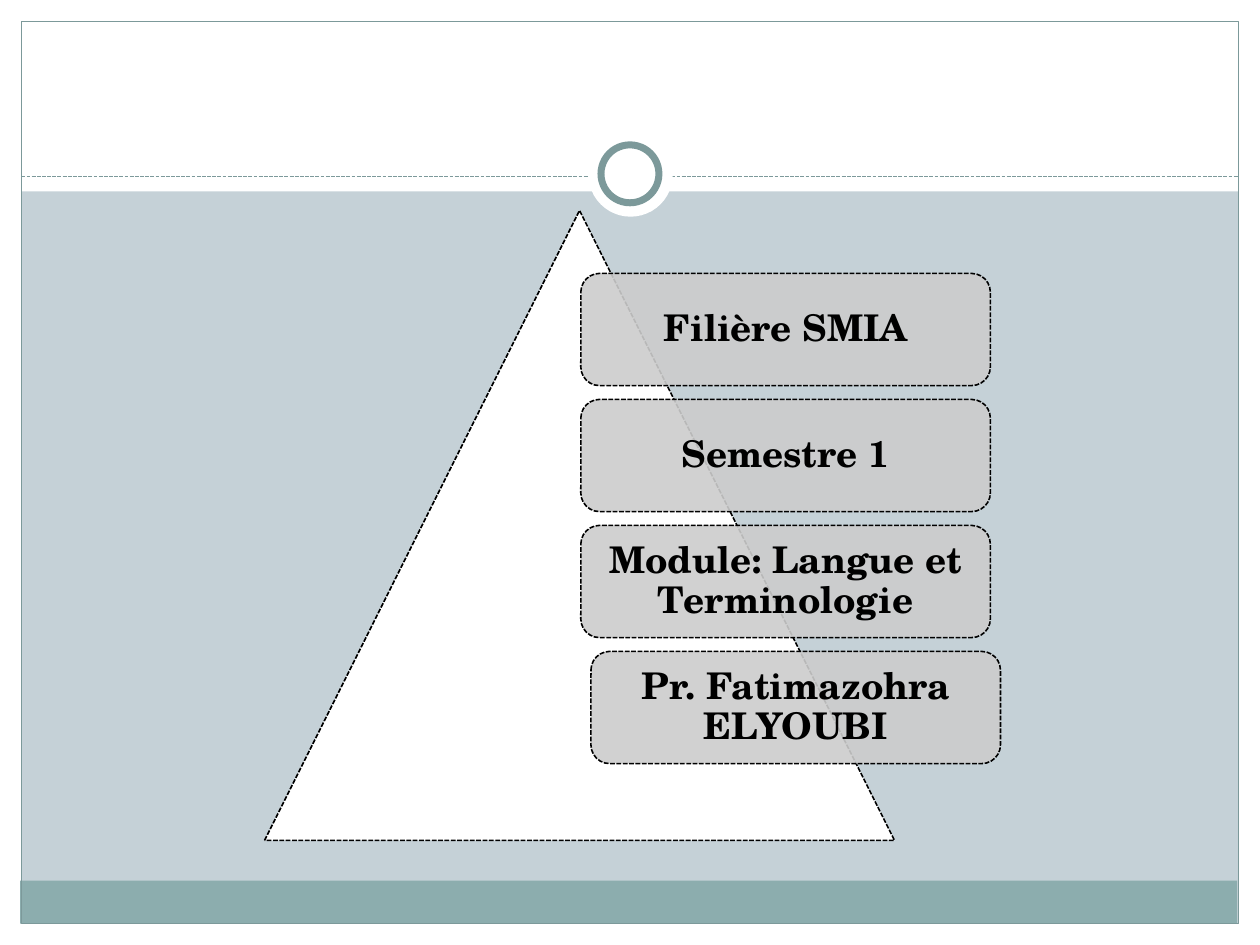
"""Build a course title slide with a triangle and four stacked cards."""
import dataclasses
import typing

import lxml.etree
import pptx
import pptx.dml.color
import pptx.enum.dml
import pptx.enum.shapes
import pptx.enum.text
import pptx.oxml.ns
import pptx.util

Inches = pptx.util.Inches
Pt = pptx.util.Pt
KIND = pptx.enum.shapes.MSO_SHAPE
DASH = pptx.enum.dml.MSO_LINE.SQUARE_DOT
FONT = "TeX Gyre Schola"
HUES = {
    "back": "C5D1D7",
    "white": "FFFFFF",
    "band": "8CADAE",
    "trim": "7C999A",
    "card": "CCCCCC",
    "ink": "000000",
}


@dataclasses.dataclass
class Block:
    kind: typing.Any
    left: float
    top: float
    width: float
    height: float
    fill: str = ""
    line: str = ""
    weight: float = 0.75
    dashed: bool = False


def hue(name: str) -> pptx.dml.color.RGBColor:
    """Return the named colour."""
    return pptx.dml.color.RGBColor.from_string(HUES[name])


def draw(slide: typing.Any, block: Block) -> typing.Any:
    """Draw one block and return its shape."""
    shape = slide.shapes.add_shape(
        block.kind, Inches(block.left), Inches(block.top),
        Inches(block.width), Inches(block.height))
    shape.shadow.inherit = False
    if block.fill:
        shape.fill.solid()
        shape.fill.fore_color.rgb = hue(block.fill)
    else:
        shape.fill.background()
    if block.line:
        shape.line.color.rgb = hue(block.line)
        shape.line.width = Pt(block.weight)
        if block.dashed:
            shape.line.dash_style = DASH
    else:
        shape.line.fill.background()
    return shape


def rule(slide: typing.Any, left: float, right: float, top: float) -> None:
    """Draw a dashed level line."""
    line = slide.shapes.add_connector(
        pptx.enum.shapes.MSO_CONNECTOR.STRAIGHT,
        Inches(left), Inches(top), Inches(right), Inches(top))
    line.line.color.rgb = hue("trim")
    line.line.width = Pt(0.75)
    line.line.dash_style = DASH
    lxml.etree.SubElement(
        line._element.spPr, pptx.oxml.ns.qn("a:effectLst"))


def card(slide: typing.Any, text: str, left: float, top: float) -> None:
    """Draw a see-through card with centred text."""
    shape = draw(slide, Block(KIND.ROUNDED_RECTANGLE, left, top, 3.25, 0.89,
                              "card", "ink", 0.9, True))
    tint = shape._element.spPr.find(".//" + pptx.oxml.ns.qn("a:srgbClr"))
    lxml.etree.SubElement(tint, pptx.oxml.ns.qn("a:alpha"), val="90000")
    frame = shape.text_frame
    frame.text = text
    frame.word_wrap = True
    frame.vertical_anchor = pptx.enum.text.MSO_ANCHOR.MIDDLE
    frame.margin_left = frame.margin_right = Inches(0.13)
    frame.margin_top = frame.margin_bottom = Inches(0.13)
    para = frame.paragraphs[0]
    para.alignment = pptx.enum.text.PP_ALIGN.CENTER
    para.line_spacing = 0.9
    font = para.runs[0].font
    font.name = FONT
    font.size = Pt(21)
    font.bold = True
    font.color.rgb = hue("ink")


FRAME = [
    Block(KIND.RECTANGLE, 0, 7.33, 10, 0.17, "white"),
    Block(KIND.RECTANGLE, 0, 0, 10, 1.52, "white"),
    Block(KIND.RECTANGLE, 0, 0, 0.17, 7.5, "white"),
    Block(KIND.RECTANGLE, 9.83, 0, 0.17, 7.5, "white"),
    Block(KIND.RECTANGLE, 0.16, 6.99, 9.66, 0.34, "band"),
    Block(KIND.RECTANGLE, 0.17, 0.17, 9.66, 7.16, "", "trim"),
]
FRONT = [
    Block(KIND.OVAL, 4.67, 1.05, 0.67, 0.67, "white"),
    Block(KIND.OVAL, 4.77, 1.15, 0.46, 0.46, "white", "trim", 4),
    Block(KIND.ISOSCELES_TRIANGLE, 2.1, 1.67, 5, 5, "white", "ink", 0.9, True),
]
CARDS = [
    ("Filière SMIA", 4.61),
    ("Semestre 1", 4.61),
    ("Module: Langue et Terminologie", 4.61),
    ("Pr. Fatimazohra ELYOUBI", 4.69),
]


def main() -> None:
    """Build and save the slide."""
    deck = pptx.Presentation()
    deck.slide_width = Inches(10)
    deck.slide_height = Inches(7.5)
    slide = deck.slides.add_slide(deck.slide_layouts[6])
    slide.background.fill.solid()
    slide.background.fill.fore_color.rgb = hue("back")
    for block in FRAME:
        draw(slide, block)
    rule(slide, 0.17, 9.83, 1.4)
    for block in FRONT:
        draw(slide, block)
    for row, (text, left) in enumerate(CARDS):
        card(slide, text, left, 2.17 + row)
    deck.save("out.pptx")


if __name__ == "__main__":
    main()
